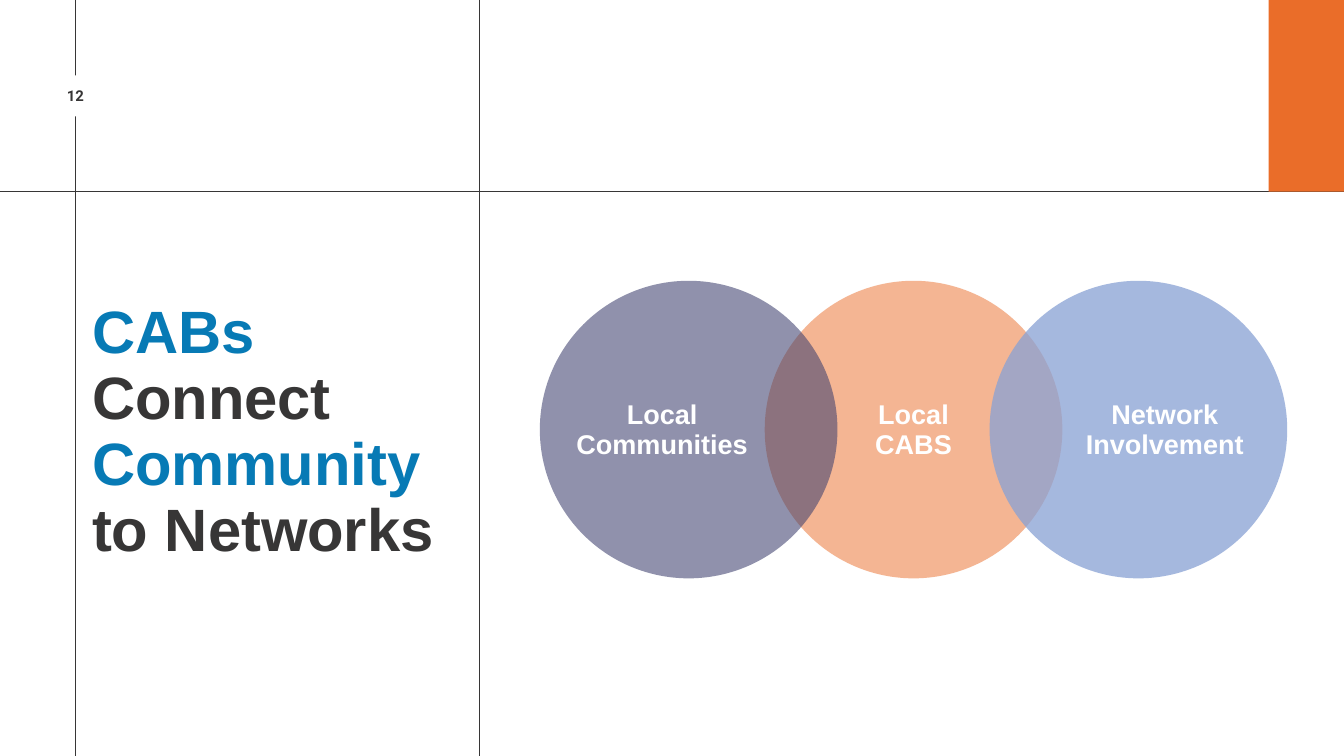
from dataclasses import dataclass

import lxml.etree
import pptx
import pptx.dml.color
import pptx.enum.shapes
import pptx.enum.text
import pptx.oxml.ns
import pptx.util
from pptx.util import Cm, Pt

SHAPE = pptx.enum.shapes.MSO_SHAPE
ALIGN = pptx.enum.text.PP_ALIGN
qn = pptx.oxml.ns.qn


@dataclass(frozen=True)
class Theme:
    ink: str = "373636"
    white: str = "FFFFFF"
    orange: str = "EA6D29"
    purple: str = "414370"
    periwinkle: str = "8AA2D4"
    blue: str = "077AB5"
    font: str = "Arial"
    number_font: str = "Roboto"
    title_size: float = 64
    label_size: float = 29
    number_size: float = 16
    leading: float = 1.1


@dataclass(frozen=True)
class Box:
    left: float
    top: float
    width: float
    height: float

    def lengths(self) -> tuple:
        return Cm(self.left), Cm(self.top), Cm(self.width), Cm(self.height)


@dataclass(frozen=True)
class Circle:
    column: int
    color: str
    opacity: int
    lines: tuple[str, ...]


THEME = Theme()
SLIDE_W, SLIDE_H = 50.8, 28.58
MARGIN_X, DIVIDER_X, HEADER_Y = 2.83, 18.12, 7.25
MIDDLE_X, MIDDLE_Y = 34.53, 16.24
DIAMETER, CIRCLE_PITCH = 11.25, 8.5
LABEL_W, LABEL_H, LABEL_PITCH = 6.75, 2.24, 9.5

# Listed from back to front; columns count from the middle circle.
CIRCLES = (
    Circle(0, THEME.orange, 50, ("Local", "CABS")),
    Circle(-1, THEME.purple, 58, ("Local Communities",)),
    Circle(1, THEME.periwinkle, 76, ("Network", "Involvement")),
)
TITLE_RUNS = (
    ("CABs", THEME.blue),
    (" Connect ", THEME.ink),
    ("Community", THEME.blue),
    (" to Networks", THEME.ink),
)


def rgb(color: str) -> pptx.dml.color.RGBColor:
    return pptx.dml.color.RGBColor.from_string(color)


def centered(x: float, y: float, width: float, height: float) -> Box:
    return Box(x - width / 2, y - height / 2, width, height)


def add_filled(s, kind, box: Box, color: str, opacity: int = 100) -> None:
    sp = s.shapes.add_shape(kind, *box.lengths())
    sp.shadow.inherit = False
    sp.line.fill.background()
    sp.fill.solid()
    sp.fill.fore_color.rgb = rgb(color)
    if opacity < 100:
        clr = sp.fill._xPr.find(".//" + qn("a:srgbClr"))
        lxml.etree.SubElement(clr, qn("a:alpha"), val=str(opacity * 1000))


def add_rule(s, x1: float, y1: float, x2: float, y2: float) -> None:
    line = s.shapes.add_connector(
        pptx.enum.shapes.MSO_CONNECTOR.STRAIGHT, Cm(x1), Cm(y1), Cm(x2), Cm(y2))
    line.line.color.rgb = rgb(THEME.ink)
    line.line.width = Pt(0.75)
    lxml.etree.SubElement(line._element.spPr, qn("a:effectLst"))


def prepare_frame(tf) -> None:
    tf.word_wrap = True
    tf.auto_size = pptx.enum.text.MSO_AUTO_SIZE.NONE
    tf.vertical_anchor = pptx.enum.text.MSO_ANCHOR.TOP
    tf.margin_left = tf.margin_top = tf.margin_right = tf.margin_bottom = 0


def style(p, align, font: str, size: float) -> None:
    p.alignment = align
    p.line_spacing = Pt(round(size * THEME.leading, 1))
    p.font.name = font
    p.font.size = Pt(size)
    p.font.bold = True


def add_label(s, box: Box, lines: tuple[str, ...], font: str, size: float,
              color: str) -> None:
    tf = s.shapes.add_textbox(*box.lengths()).text_frame
    prepare_frame(tf)
    tf.text = "\n".join(lines)
    for p in tf.paragraphs:
        style(p, ALIGN.CENTER, font, size)
        p.font.color.rgb = rgb(color)


def fill_title(s, box: Box) -> None:
    title = s.shapes.title
    title.left, title.top, title.width, title.height = box.lengths()
    prepare_frame(title.text_frame)
    p = title.text_frame.paragraphs[0]
    style(p, ALIGN.LEFT, THEME.font, THEME.title_size)
    for text, color in TITLE_RUNS:
        r = p.add_run()
        r.text = text
        r.font.color.rgb = rgb(color)


def main() -> None:
    prs = pptx.Presentation()
    prs.slide_width, prs.slide_height = Cm(SLIDE_W), Cm(SLIDE_H)
    s = prs.slides.add_slide(prs.slide_layouts[5])

    fill_title(s, Box(3.48, 11.35, 14.53, 9.91))

    for x in (MARGIN_X, DIVIDER_X):
        add_rule(s, x, 0, x, SLIDE_H)
    add_rule(s, 0, HEADER_Y, SLIDE_W, HEADER_Y)
    add_filled(s, SHAPE.RECTANGLE, Box(47.95, 0, SLIDE_W - 47.95, HEADER_Y),
               THEME.orange)

    add_filled(s, SHAPE.RECTANGLE, Box(1.75, 2.85, 2.18, 1.55), THEME.white)
    add_label(s, Box(1.93, 3.33, 1.85, 0.64), ("12",), THEME.number_font,
              THEME.number_size, THEME.ink)

    for c in CIRCLES:
        x = MIDDLE_X + c.column * CIRCLE_PITCH
        add_filled(s, SHAPE.OVAL, centered(x, MIDDLE_Y, DIAMETER, DIAMETER),
                   c.color, c.opacity)
    for c in CIRCLES:
        x = MIDDLE_X + c.column * LABEL_PITCH
        add_label(s, centered(x, MIDDLE_Y, LABEL_W, LABEL_H), c.lines,
                  THEME.font, THEME.label_size, THEME.white)

    prs.save("out.pptx")


if __name__ == "__main__":
    main()
